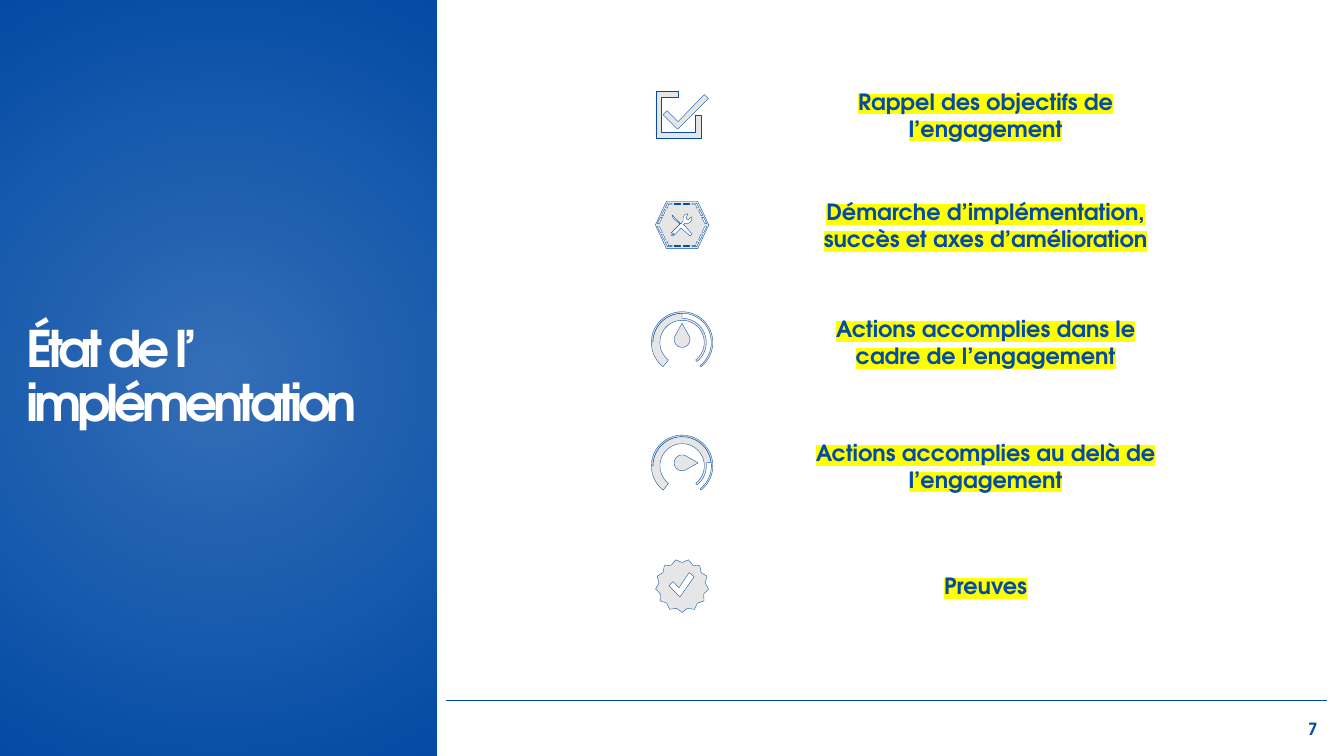
import math
from dataclasses import dataclass

import lxml.etree
import pptx
import pptx.dml.color
import pptx.enum.shapes
import pptx.enum.text
import pptx.oxml
import pptx.oxml.ns
import pptx.util

Cm = pptx.util.Cm
ALIGN = pptx.enum.text.PP_ALIGN


@dataclass(frozen=True)
class Theme:
    font: str = "TeX Gyre Adventor"
    blue: str = "034BA6"
    white: str = "FFFFFF"
    grey: str = "E7E6E6"
    yellow: str = "FFFF00"
    title_size: int = 36
    label_size: int = 16
    number_size: int = 12
    rule_width: float = 0.75
    icon_width: float = 0.25


def rgb(code):
    return pptx.dml.color.RGBColor.from_string(code)


def polar(radius, degrees, centre=(0, 0)):
    angle = math.radians(degrees)
    return (centre[0] + radius * math.cos(angle), centre[1] + radius * math.sin(angle))


def arc(radius, start, end, centre=(0, 0), steps=48):
    return [polar(radius, start + (end - start) * k / steps, centre) for k in range(steps + 1)]


def checkbox():
    tick = [(22, -20), (26, -16), (-4, 14), (-5, 14), (-19, 0), (-15, -4), (-4, 7)]
    frame = [(-26, -23), (-4, -23), (-4, -17), (-21, -17), (-21, 17),
             (13, 17), (13, 1), (19, 1), (19, 23), (-26, 23)]
    return [tick, frame]


def toolkit():
    hexagon = [(-15.5, -23.5), (15.5, -23.5), (26.5, 0), (15.5, 23.5), (-15.5, 23.5), (-26.5, 0)]
    stitches = [
        [(1.5, -21.5), (1.5, -20.5), (7.5, -20.5), (7.5, -21.5)],
        [(10.5, -21.5), (9.5, -20.5), (13.5, -20.5), (14.5, -16.5), (16.5, -17.5), (14.5, -21.5)],
        [(17.5, -15.5), (16.5, -14.5), (18.5, -9.5), (20.5, -9.5)],
        [(21.5, -7.5), (19.5, -7.5), (22.5, -1.5), (24.5, -1.5)],
    ]
    mirrored = [[(x * across, y * down) for x, y in stitch]
                for stitch in stitches for across in (1, -1) for down in (1, -1)]
    tools = [(5, -11), (2, -9.5), (1, -7), (1, -4), (-1, -1), (-7, -7), (-8, -8), (-10, -10),
             (-9, -7), (-8, -6), (-2, -1), (-11, 8), (-11, 10), (-9, 11), (-8, 10.5), (-1, 3),
             (8, 11), (9, 10), (10, 9), (2, 0), (1, 0), (3, -2), (5, -1), (8, -2.5),
             (10, -6), (9, -8), (6, -5), (4, -7), (6, -11)]
    return [hexagon, *mirrored, tools, arc(1, 0, 360, (-9, 9), 12)]


def gauge(needle, fork, rotation):
    start, end = 128, 412
    body = (0, -3)
    band = (arc(30.5, start, end) + arc(29, end, fork) + arc(24, fork, end)
            + arc(22, end, start))
    slit = arc(29, 180, fork) + arc(28.8, fork, 180)
    drop = [polar(16, needle, body)] + arc(7.8, needle + 60, needle + 300, body)
    turn = math.radians(-rotation)
    return [[(x * math.cos(turn) - y * math.sin(turn), x * math.sin(turn) + y * math.cos(turn))
             for x, y in contour] for contour in (band, slit, drop)]


def badge():
    teeth = 13
    edge = [polar(23 if k % 2 else 26.5, 90 + k * 180 / teeth) for k in range(2 * teeth)]
    tick = [(7, -13), (-3, 2), (-9, -4), (-13, 0), (-2, 11), (12, -9)]
    return [tick, edge]


class SlideBuilder:
    def __init__(self, page, theme):
        self.page = page
        self.theme = theme

    def panel(self, left, top, width, height):
        box = self.page.shapes.add_shape(
            pptx.enum.shapes.MSO_SHAPE.RECTANGLE, Cm(left), Cm(top), Cm(width), Cm(height))
        box.shadow.inherit = False
        box.line.fill.background()
        box.fill.background()
        gradient = pptx.oxml.parse_xml(
            f'<a:gradFill {pptx.oxml.ns.nsdecls("a")} rotWithShape="1"><a:gsLst>'
            f'<a:gs pos="0"><a:srgbClr val="{self.theme.blue}"><a:alpha val="80000"/></a:srgbClr></a:gs>'
            f'<a:gs pos="100000"><a:srgbClr val="{self.theme.blue}"/></a:gs></a:gsLst>'
            '<a:path path="circle"><a:fillToRect l="50000" t="50000" r="50000" b="50000"/></a:path>'
            '</a:gradFill>')
        properties = box._element.spPr
        properties.replace(properties.find(pptx.oxml.ns.qn("a:noFill")), gradient)

    def rule(self, left, right, top):
        line = self.page.shapes.add_connector(
            pptx.enum.shapes.MSO_CONNECTOR.STRAIGHT, Cm(left), Cm(top), Cm(right), Cm(top))
        line.line.color.rgb = rgb(self.theme.blue)
        line.line.width = pptx.util.Pt(self.theme.rule_width)
        lxml.etree.SubElement(line._element.spPr, pptx.oxml.ns.qn("a:effectLst"))

    def text(self, words, left, top, width, height, size, color, align,
             canvas=None, highlight=None, tracking=None, leading=None):
        box = (canvas or self.page).shapes.add_textbox(Cm(left), Cm(top), Cm(width), Cm(height))
        frame = box.text_frame
        frame.word_wrap = True
        frame.vertical_anchor = pptx.enum.text.MSO_ANCHOR.MIDDLE
        para = frame.paragraphs[0]
        para.text = words
        para.alignment = align
        para.line_spacing = leading
        for span in para.runs:
            span.font.size = pptx.util.Pt(size)
            span.font.bold = True
            span.font.color.rgb = rgb(color)
            span.font.name = self.theme.font
            properties = span._r.get_or_add_rPr()
            if tracking:
                properties.set("spc", str(tracking * 100))
            if highlight:
                properties.find(pptx.oxml.ns.qn("a:solidFill")).addnext(pptx.oxml.parse_xml(
                    f'<a:highlight {pptx.oxml.ns.nsdecls("a")}>'
                    f'<a:srgbClr val="{highlight}"/></a:highlight>'))

    def icon(self, canvas, contours, centre_x, centre_y, rotation):
        unit = Cm(0.0254)
        scaled = [[(x * unit, y * unit) for x, y in contour] for contour in contours]
        builder = canvas.shapes.build_freeform(*scaled[0][0])
        for index, contour in enumerate(scaled):
            if index:
                builder.move_to(*contour[0])
            builder.add_line_segments(contour[1:], close=True)
        shape = builder.convert_to_shape(Cm(centre_x), Cm(centre_y))
        shape.rotation = rotation
        shape.shadow.inherit = False
        shape.fill.solid()
        shape.fill.fore_color.rgb = rgb(self.theme.grey)
        shape.line.color.rgb = rgb(self.theme.blue)
        shape.line.width = pptx.util.Pt(self.theme.icon_width)

    def row(self, words, centre_y, contours, rotation=0):
        height = 1.2
        group = self.page.shapes.add_group_shape()
        self.text(words, 19.94, centre_y - height / 2, 9.8, height, self.theme.label_size,
                  self.theme.blue, ALIGN.CENTER, canvas=group, highlight=self.theme.yellow)
        self.icon(group, contours, 17.19, centre_y, rotation)


def main():
    deck = pptx.Presentation()
    deck.slide_width, deck.slide_height = Cm(33.87), Cm(19.05)
    theme = Theme()
    slide = SlideBuilder(deck.slides.add_slide(deck.slide_layouts[6]), theme)
    slide.panel(0, 0, 11, 19.05)
    slide.rule(11.23, 33.45, 17.65)
    slide.text("État de l’\vimplémentation", 0.41, 5.61, 10.13, 7.85, theme.title_size,
               theme.white, ALIGN.LEFT, tracking=-3, leading=0.9)
    slide.text("7", 24.41, 17.86, 9.04, 1.02, theme.number_size, theme.blue, ALIGN.RIGHT)
    upright, sideways = 316, 45.2
    slide.row("Rappel des objectifs de l’engagement", 2.89, checkbox())
    slide.row("Démarche d’implémentation, succès et axes d’amélioration", 5.67, toolkit())
    slide.row("Actions accomplies dans le cadre de l’engagement", 8.63,
              gauge(270, 270, upright), upright)
    slide.row("Actions accomplies au delà de l’engagement", 11.74,
              gauge(360, 353, sideways), sideways)
    slide.row("Preuves", 14.76, badge())
    deck.save("out.pptx")


if __name__ == "__main__":
    main()
